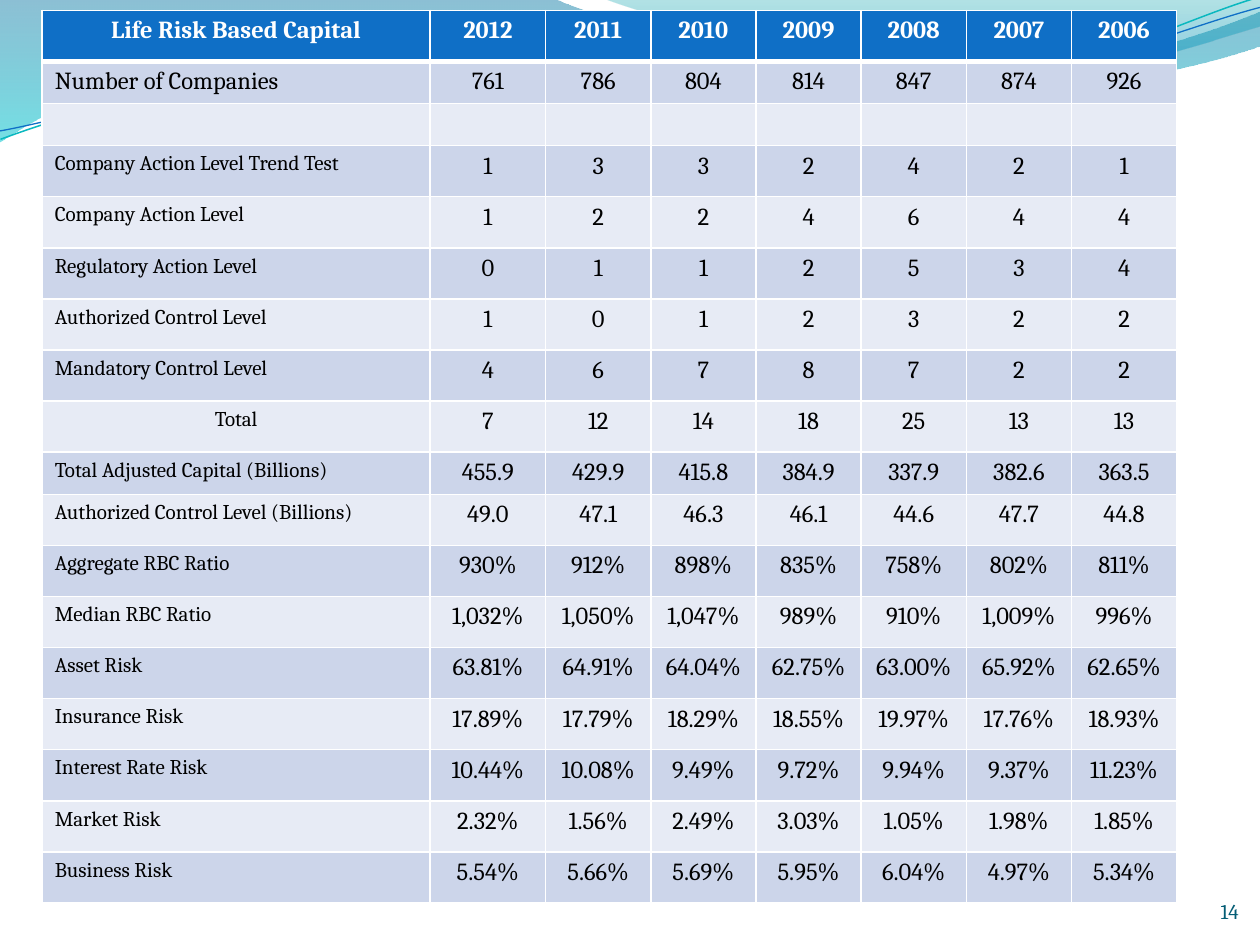
from lxml import etree
from pptx import Presentation
from pptx.dml.color import RGBColor
from pptx.enum.text import MSO_ANCHOR, PP_ALIGN
from pptx.oxml.ns import qn
from pptx.util import Cm, Pt

CENTER, LEFT, RIGHT = PP_ALIGN.CENTER, PP_ALIGN.LEFT, PP_ALIGN.RIGHT
BOTTOM = MSO_ANCHOR.BOTTOM
FONT = "Cambria"
COLORS = {
    "header": "0F6FC6", "odd": "CCD5EA", "even": "E7EBF5", "border": "FFFFFF",
    "header_text": "FFFFFF", "text": "000000", "page_number": "045D75",
    "teal": "0AB8BF", "blue": "0F6FC6", "deep_blue": "0074A1",
    "aqua": "00C6CF", "sea": "00A1A9", "sky": "008BBF",
}

HEADER = ["Life Risk Based Capital", "2012", "2011", "2010", "2009", "2008", "2007", "2006"]
RECORDS = [
    ["Number of Companies", "761", "786", "804", "814", "847", "874", "926"],
    [""] * 8,
    ["Company Action Level Trend Test", "1", "3", "3", "2", "4", "2", "1"],
    ["Company Action Level", "1", "2", "2", "4", "6", "4", "4"],
    ["Regulatory Action Level", "0", "1", "1", "2", "5", "3", "4"],
    ["Authorized Control Level", "1", "0", "1", "2", "3", "2", "2"],
    ["Mandatory Control Level", "4", "6", "7", "8", "7", "2", "2"],
    ["Total", "7", "12", "14", "18", "25", "13", "13"],
    ["Total Adjusted Capital (Billions)", "455.9", "429.9", "415.8", "384.9", "337.9", "382.6", "363.5"],
    ["Authorized Control Level (Billions)", "49.0", "47.1", "46.3", "46.1", "44.6", "47.7", "44.8"],
    ["Aggregate RBC Ratio", "930%", "912%", "898%", "835%", "758%", "802%", "811%"],
    ["Median RBC Ratio", "1,032%", "1,050%", "1,047%", "989%", "910%", "1,009%", "996%"],
    ["Asset Risk", "63.81%", "64.91%", "64.04%", "62.75%", "63.00%", "65.92%", "62.65%"],
    ["Insurance Risk", "17.89%", "17.79%", "18.29%", "18.55%", "19.97%", "17.76%", "18.93%"],
    ["Interest Rate Risk", "10.44%", "10.08%", "9.49%", "9.72%", "9.94%", "9.37%", "11.23%"],
    ["Market Risk", "2.32%", "1.56%", "2.49%", "3.03%", "1.05%", "1.98%", "1.85%"],
    ["Business Risk", "5.54%", "5.66%", "5.69%", "5.95%", "6.04%", "4.97%", "5.34%"],
]
COLUMN_WIDTHS = [7.82, 2.33] + [2.12] * 6
ROW_HEIGHT, LOW_ROW_HEIGHT = 1.03, 0.84
LOW_ROWS = (1, 2, 9)

WAVES = [
    {"start": (0, 0),
     "steps": [(11.18, -0.03), (12.09, 0.43, 16.87, 1.6, 19.25, 1.6),
               (21.67, 1.6, 24.33, 0.66, 25.4, 0.23), (25.43, 0.91),
               (24.97, 1.12, 22.1, 1.93, 18.95, 1.91), (15.8, 1.91, 9.7, 0.71, 6.53, 0.86),
               (3.28, 0.91, 1.17, 2.11, -0.03, 2.87)],
     "gradient": [(0, "deep_blue", 45), (1, "aqua", 55)]},
    {"start": (12.17, -0.03),
     "steps": [(12.93, 0.28, 17.32, 1.57, 19.53, 1.65),
               (21.74, 1.75, 24.41, 0.81, 25.4, 0.53), (25.4, 0)],
     "gradient": [(0, "sea", 30), (0.8, "sky", 45)]},
    {"start": (-0.04, 2.21),
     "steps": [(1.19, 1.82, 4.02, 1.04, 7.05, 1.05), (10.05, 1.07, 15.02, 2.37, 18.08, 2.29),
               (21.13, 2.2, 23.86, 0.91, 25.41, 0.55)],
     "line": ("teal", 0.85)},
    {"start": (-0.04, 2.04),
     "steps": [(1.16, 1.89, 4.17, 1.15, 7.2, 1.16), (10.25, 1.18, 15.13, 2.25, 18.19, 2.16),
               (21.21, 2.1, 23.93, 1.06, 25.45, 0.75)],
     "line": ("blue", 0.75)},
]
LINE_ROTATION = 357.3


def rgb(name):
    return RGBColor.from_string(COLORS[name])


def bend(wave, steps):
    segments = list(wave._element.spPr.iter(qn("a:lnTo")))
    for segment, step in zip(segments, steps):
        if len(step) == 2:
            continue
        curve = etree.Element(qn("a:cubicBezTo"))
        for x, y in zip(step[::2], step[1::2]):
            etree.SubElement(curve, qn("a:pt"), x=str(Cm(x) - wave.left), y=str(Cm(y) - wave.top))
        segment.getparent().replace(segment, curve)


def add_wave(slide, start, steps, gradient=None, line=None):
    builder = slide.shapes.build_freeform(Cm(start[0]), Cm(start[1]))
    builder.add_line_segments([(Cm(step[-2]), Cm(step[-1])) for step in steps],
                              close=gradient is not None)
    wave = builder.convert_to_shape()
    wave.shadow.inherit = False
    bend(wave, steps)
    if line:
        wave.rotation = LINE_ROTATION
        wave.fill.background()
        wave.line.color.rgb = rgb(line[0])
        wave.line.width = Pt(line[1])
        return
    wave.line.fill.background()
    wave.fill.gradient()
    wave.fill.gradient_angle = 270
    for stop, (position, color, _) in zip(wave.fill.gradient_stops, gradient):
        stop.position = position
        stop.color.rgb = rgb(color)
    for tint, (_, _, opacity) in zip(wave._element.spPr.iter(qn("a:srgbClr")), gradient):
        etree.SubElement(tint, qn("a:alpha"), val=str(opacity * 1000))


def write(paragraph, text, color, size, align, bold=False):
    paragraph.alignment = align
    if not text:
        etree.SubElement(paragraph._p, qn("a:endParaRPr"), sz=str(size * 100))
        return
    run = paragraph.add_run()
    run.text = text
    run.font.color.rgb = rgb(color)
    for key, value in {"name": FONT, "size": Pt(size), "bold": bold}.items():
        setattr(run.font, key, value)


def set_borders(cell, widths):
    properties = cell._tc.get_or_add_tcPr()
    for index, (side, width) in enumerate(widths.items()):
        border = etree.Element(qn(f"a:ln{side}"), w=str(Pt(width)))
        fill = etree.SubElement(border, qn("a:solidFill"))
        etree.SubElement(fill, qn("a:srgbClr"), val=COLORS["border"])
        properties.insert(index, border)


def add_capital_table(slide):
    rows = [HEADER] + RECORDS
    heights = [LOW_ROW_HEIGHT if r in LOW_ROWS else ROW_HEIGHT for r in range(len(rows))]
    table = slide.shapes.add_table(len(rows), len(HEADER), Cm(0.85), Cm(0.21),
                                   Cm(sum(COLUMN_WIDTHS)), Cm(sum(heights))).table
    for column, width in zip(table.columns, COLUMN_WIDTHS):
        column.width = Cm(width)
    for r, (values, height) in enumerate(zip(rows, heights)):
        table.rows[r].height = Cm(height)
        band = "header" if r == 0 else "odd" if r % 2 else "even"
        for c, value in enumerate(values):
            cell = table.cell(r, c)
            cell.fill.solid()
            cell.fill.fore_color.rgb = rgb(band)
            set_borders(cell, {"L": 1, "R": 1, "T": 3 if r == 1 else 1, "B": 3 if r == 0 else 1})
            centered = c > 0 or r == 0 or value == "Total"
            write(cell.text_frame.paragraphs[0], value,
                  "header_text" if r == 0 else "text",
                  12 if c == 0 and r > 2 else 14,
                  CENTER if centered else LEFT, bold=r == 0)


def add_page_number(slide, number):
    frame = slide.shapes.add_textbox(Cm(23.5), Cm(17.6), Cm(1.47), Cm(1.02)).text_frame
    settings = {"word_wrap": True, "vertical_anchor": BOTTOM, "margin_left": 0,
                "margin_right": 0, "margin_top": 0, "margin_bottom": 0}
    for key, value in settings.items():
        setattr(frame, key, value)
    write(frame.paragraphs[0], number, "page_number", 12, RIGHT)


def main():
    deck = Presentation()
    deck.slide_width, deck.slide_height = Cm(25.4), Cm(19.05)
    slide = deck.slides.add_slide(deck.slide_layouts[6])
    for wave in WAVES:
        add_wave(slide, **wave)
    add_page_number(slide, "14")
    add_capital_table(slide)
    deck.save("out.pptx")


if __name__ == "__main__":
    main()
